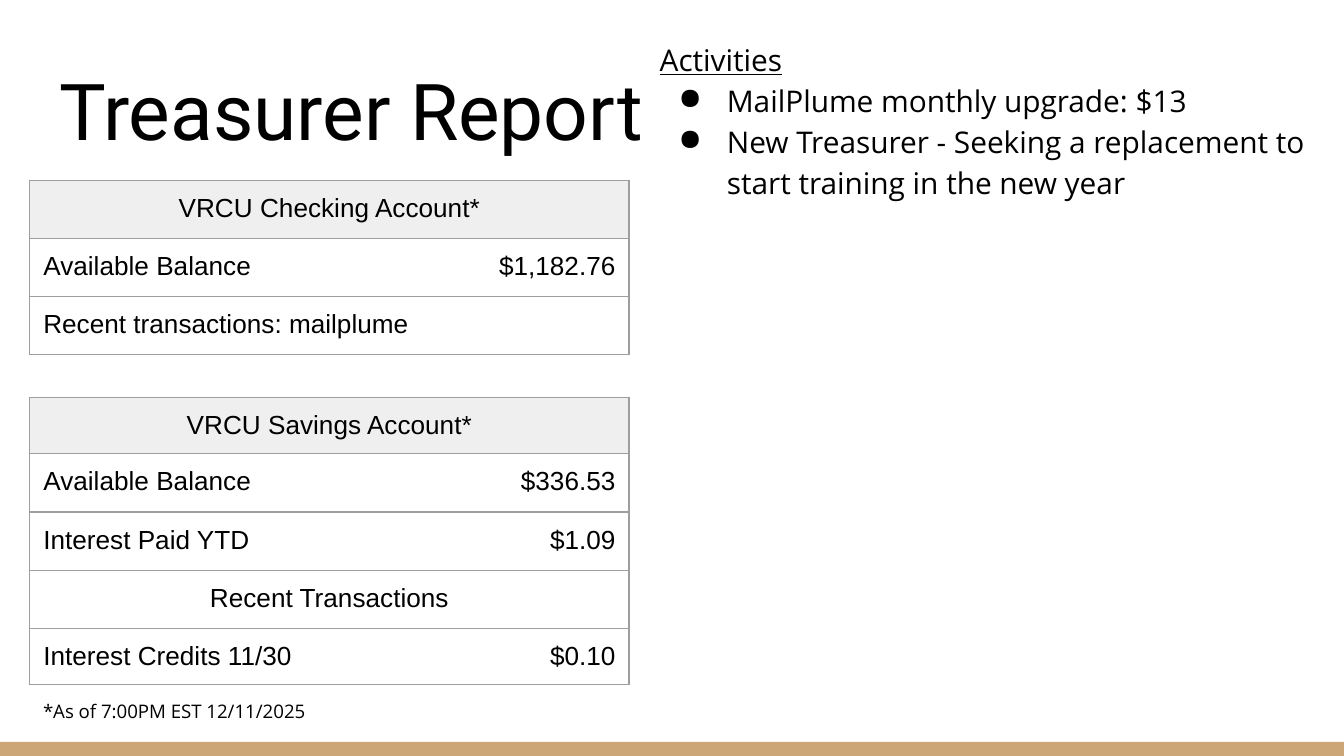
from dataclasses import dataclass

import pptx
import pptx.dml.color
import pptx.enum.shapes
import pptx.enum.text
import pptx.oxml
import pptx.oxml.ns
import pptx.util
from lxml import etree

Pt = pptx.util.Pt
RGBColor = pptx.dml.color.RGBColor
ALIGN = pptx.enum.text.PP_ALIGN
ANCHOR = pptx.enum.text.MSO_ANCHOR
qn = pptx.oxml.ns.qn


@dataclass(frozen=True)
class Theme:
    ink: str = "000000"
    accent: str = "CCA677"
    header: str = "EFEFEF"
    border: str = "9E9E9E"
    title_font: str = "Roboto"
    body_font: str = "Open Sans"
    table_font: str = "Arial"
    title_size: float = 42
    body_size: float = 16
    table_size: float = 14
    note_size: float = 10
    inset: float = 7.2
    border_width: float = 0.75


THEME = Theme()
WIDTH, HEIGHT = 720, 405
TABLE_LEFT = 16


def add_run(paragraph, text, font, size, underline=None):
    run = paragraph.add_run()
    run.text = text
    run.font.name = font
    run.font.size = Pt(size)
    run.font.underline = underline
    run.font.color.rgb = RGBColor.from_string(THEME.ink)


def set_frame(frame, anchor):
    frame.word_wrap = True
    frame.auto_size = pptx.enum.text.MSO_AUTO_SIZE.NONE
    frame.vertical_anchor = anchor
    set_margins(frame)


def set_margins(container):
    container.margin_left = container.margin_right = Pt(THEME.inset)
    container.margin_top = container.margin_bottom = Pt(THEME.inset)


def add_text_box(slide, left, top, width, height):
    box = slide.shapes.add_textbox(Pt(left), Pt(top), Pt(width), Pt(height))
    set_frame(box.text_frame, ANCHOR.TOP)
    return box.text_frame


def add_title(slide, text):
    title = slide.shapes.title
    title.left, title.top, title.width, title.height = Pt(24.5), Pt(25.2), Pt(671), Pt(65.5)
    set_frame(title.text_frame, ANCHOR.BOTTOM)
    paragraph = title.text_frame.paragraphs[0]
    paragraph.alignment = ALIGN.LEFT
    add_run(paragraph, text, THEME.title_font, THEME.title_size)


def add_footer_bar(slide):
    top = 397.5
    bar = slide.shapes.add_shape(pptx.enum.shapes.MSO_SHAPE.RECTANGLE,
                                 0, Pt(top), Pt(WIDTH), Pt(HEIGHT - top))
    bar.shadow.inherit = False
    bar.fill.solid()
    bar.fill.fore_color.rgb = RGBColor.from_string(THEME.accent)
    bar.line.fill.background()


def set_borders(cell, hidden_side):
    """Draw all four sides of a cell except the hidden one."""
    properties = cell._tc.get_or_add_tcPr()
    for index, side in enumerate(("lnL", "lnR", "lnT", "lnB")):
        line = etree.Element(qn(f"a:{side}"), w=str(Pt(THEME.border_width)))
        if side == hidden_side:
            etree.SubElement(line, qn("a:noFill"))
        else:
            fill = etree.SubElement(line, qn("a:solidFill"))
            etree.SubElement(fill, qn("a:srgbClr"), val=THEME.border)
        properties.insert(index, line)


def fill_cell(cell, text, alignment):
    set_margins(cell)
    paragraph = cell.text_frame.paragraphs[0]
    paragraph.alignment = alignment
    add_run(paragraph, text, THEME.table_font, THEME.table_size)


def add_account_table(slide, top, column_widths, row_heights, rows):
    """Rows hold label, amount and alignment; a row without an amount is merged."""
    frame = slide.shapes.add_table(len(rows), 2, Pt(TABLE_LEFT), Pt(top),
                                   Pt(sum(column_widths)), Pt(sum(row_heights)))
    table = frame.table
    table.first_row = table.horz_banding = False
    for column, width in zip(table.columns, column_widths):
        column.width = Pt(width)
    for index, (label, amount, alignment) in enumerate(rows):
        table.rows[index].height = Pt(row_heights[index])
        left, right = table.cell(index, 0), table.cell(index, 1)
        for cell in (left, right):
            cell.fill.background()
        if index == 0:
            left.fill.solid()
            left.fill.fore_color.rgb = RGBColor.from_string(THEME.header)
        fill_cell(left, label, alignment)
        if amount:
            fill_cell(right, amount, ALIGN.RIGHT)
            set_borders(left, "lnR")
        else:
            left.merge(right)
            set_borders(left, None)
        set_borders(right, "lnL")


def add_bullet(paragraph):
    properties = paragraph._p.get_or_add_pPr()
    properties.set("marL", str(Pt(36)))
    properties.set("indent", str(Pt(-26)))
    color = etree.SubElement(properties, qn("a:buClr"))
    etree.SubElement(color, qn("a:srgbClr"), val=THEME.ink)
    etree.SubElement(properties, qn("a:buChar"), char="●")


def add_activities(slide, heading, items):
    frame = add_text_box(slide, 346.3, 12.2, 373.7, 381)
    paragraph = frame.paragraphs[0]
    paragraph.line_spacing = 1.15
    add_run(paragraph, heading, THEME.body_font, THEME.body_size, underline=True)
    for item in items:
        paragraph = frame.add_paragraph()
        paragraph.line_spacing = 1.15
        add_bullet(paragraph)
        add_run(paragraph, item, THEME.body_font, THEME.body_size)


def add_note(slide, text):
    frame = add_text_box(slide, TABLE_LEFT, 367.9, 271.4, 26.6)
    add_run(frame.paragraphs[0], text, THEME.body_font, THEME.note_size)


def main():
    presentation = pptx.Presentation()
    presentation.slide_width, presentation.slide_height = Pt(WIDTH), Pt(HEIGHT)
    slide = presentation.slides.add_slide(presentation.slide_layouts[5])

    add_footer_bar(slide)
    add_title(slide, "Treasurer Report")
    add_account_table(slide, 212.9, (242.6, 78.4), (30, 31.2, 31.2, 31.2, 30), [
        ("VRCU Savings Account*", None, ALIGN.CENTER),
        ("Available Balance", "$336.53", ALIGN.LEFT),
        ("Interest Paid YTD", "$1.09", ALIGN.LEFT),
        ("Recent Transactions", None, ALIGN.CENTER),
        ("Interest Credits 11/30", "$0.10", ALIGN.LEFT),
    ])
    add_account_table(slide, 96.5, (212, 109), (31.2,) * 3, [
        ("VRCU Checking Account*", None, ALIGN.CENTER),
        ("Available Balance", "$1,182.76", ALIGN.LEFT),
        ("Recent transactions: mailplume", None, ALIGN.LEFT),
    ])
    add_note(slide, "*As of 7:00PM EST 12/11/2025")
    add_activities(slide, "Activities", [
        "MailPlume monthly upgrade: $13",
        "New Treasurer - Seeking a replacement to start training in the new year",
    ])
    presentation.save("out.pptx")


if __name__ == "__main__":
    main()
